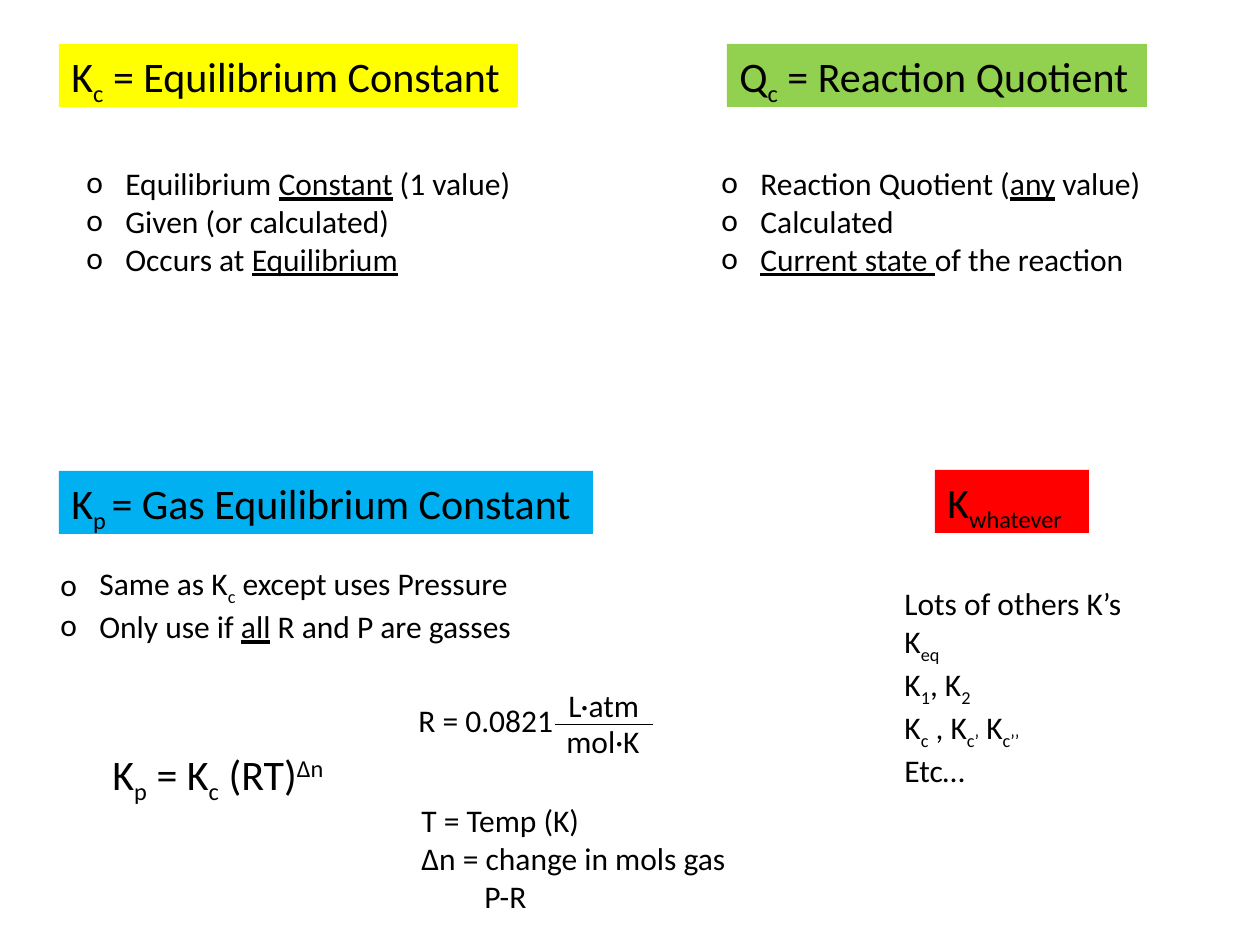
from lxml import etree
from pptx import Presentation
from pptx import util as u
from pptx.dml.color import RGBColor
from pptx.enum import shapes, text
from pptx.oxml.ns import qn

SCALE = 914400 / 126
FONT, INK = "Calibri", "000000"
HEAD, BODY = 24, 18
INDENT, TAB = 39, 63


def sub(words):
    return words, {"baseline": "-25000"}


def sup(words):
    return words, {"baseline": "30000"}


def under(words):
    return words, {"u": "sng"}


HEADERS = [
    ((727, 44, 420, 63), "92D050", ["Q", sub("c"), " = Reaction Quotient"]),
    ((59, 44, 459, 63), "FFFF00", ["K", sub("c"), " = Equilibrium Constant"]),
    ((59, 471, 534, 63), "00B0F0", ["K", sub("p "), "= Gas Equilibrium Constant"]),
    ((935, 470, 154, 63), "FF0000", ["K", sub("whatever")]),
]
BULLETS = [
    ((74, 158, 455, 127), False, [
        ["Equilibrium ", under("Constant"), " (1 value)"],
        ["Given (or calculated)"],
        ["Occurs at ", under("Equilibrium")]]),
    ((709, 158, 450, 127), False, [
        ["Reaction Quotient (", under("any"), " value)"],
        ["Calculated"],
        [under("Current state "), "of the reaction"]]),
    ((48, 558, 630, 89), True, [
        ["Same as K", sub("c"), " except uses Pressure"],
        ["Only use if ", under("all"), " R and P are gasses"]]),
]
NOTES = [
    ((100, 742, 244, 63), HEAD, [
        ["K", sub("p"), " = K", sub("c"), " (RT)", sup("Δn")]]),
    ((409, 795, 334, 127), BODY, [
        ["T = Temp (K)"], ["Δn = change in mols gas"], ["\tP-R"]]),
    ((892, 578, 244, 204), BODY, [
        ["Lots of others K’s"],
        ["K", sub("eq")],
        ["K", sub("1"), ", K", sub("2")],
        ["K", sub("c"), " , K", sub("c’"), " K", sub("c’’")],
        ["Etc…"]]),
]
GAS_CONSTANT = [
    ((406, 695, 161, 50), "R = 0.0821"),
    ((556, 680, 98, 50), "L·atm"),
    ((554, 716, 100, 50), "mol·K"),
]
FRACTION_BAR = (555, 724, 653, 724)


def px(*values):
    return [u.Emu(round(value * SCALE)) for value in values]


def colour(code):
    return RGBColor.from_string(code)


def apply(target, values):
    for name, value in values.items():
        setattr(target, name, value)


def add_bullet(para):
    props = para._p.get_or_add_pPr()
    props.set("marL", str(px(INDENT)[0]))
    props.set("indent", str(px(-INDENT)[0]))
    etree.SubElement(props, qn("a:buFont"), typeface=FONT)
    etree.SubElement(props, qn("a:buChar"), char="o")


def add_tab(para):
    stops = etree.SubElement(para._p.get_or_add_pPr(), qn("a:tabLst"))
    etree.SubElement(stops, qn("a:tab"), pos=str(px(TAB)[0]), algn="l")


def write(box, lines, size, wrap=False, bullets=False):
    frame = box.text_frame
    apply(frame, {"word_wrap": wrap, "vertical_anchor": text.MSO_ANCHOR.TOP,
                  "auto_size": text.MSO_AUTO_SIZE.SHAPE_TO_FIT_TEXT})
    for index, line in enumerate(lines):
        para = frame.add_paragraph() if index else frame.paragraphs[0]
        para.alignment = text.PP_ALIGN.LEFT
        if bullets:
            add_bullet(para)
        for piece in line:
            words, marks = (piece, {}) if isinstance(piece, str) else piece
            if "\t" in words:
                add_tab(para)
            span = para.add_run()
            span.text = words
            apply(span.font, {"name": FONT, "size": u.Pt(size)})
            span.font.color.rgb = colour(INK)
            for name, value in marks.items():
                span.font._element.set(name, value)


def add_header(page, place, fill, line):
    box = page.shapes.add_shape(shapes.MSO_SHAPE.RECTANGLE, *px(*place))
    box.shadow.inherit = False
    box.fill.solid()
    box.fill.fore_color.rgb = colour(fill)
    box.line.fill.background()
    write(box, [line], HEAD)


def add_gas_constant(page):
    group = page.shapes.add_group_shape()
    for place, words in GAS_CONSTANT:
        write(group.shapes.add_textbox(*px(*place)), [[words]], BODY)
    bar = group.shapes.add_connector(
        shapes.MSO_CONNECTOR.STRAIGHT, *px(*FRACTION_BAR))
    bar.line.color.rgb = colour(INK)
    bar.line.width = u.Pt(0.5)
    etree.SubElement(bar._element.spPr, qn("a:effectLst"))


def main():
    deck = Presentation()
    deck.slide_width, deck.slide_height = px(1260, 945)
    page = deck.slides.add_slide(deck.slide_layouts[6])
    for place, fill, line in HEADERS:
        add_header(page, place, fill, line)
    for place, wrap, lines in BULLETS:
        write(page.shapes.add_textbox(*px(*place)), lines, BODY, wrap, True)
    for place, size, lines in NOTES:
        write(page.shapes.add_textbox(*px(*place)), lines, size)
    add_gas_constant(page)
    deck.save("out.pptx")


if __name__ == "__main__":
    main()
